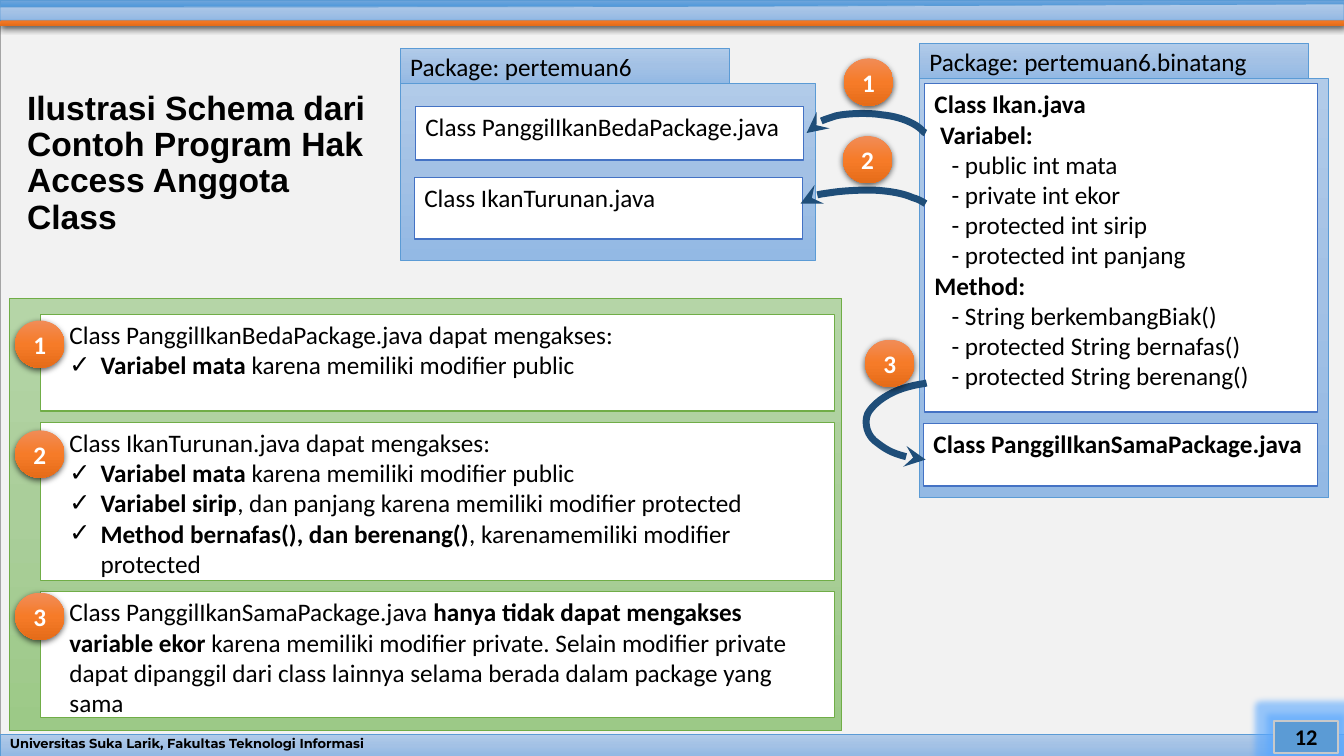
from lxml.etree import SubElement
from pptx import Presentation
from pptx.dml.color import RGBColor
from pptx.enum.shapes import MSO_SHAPE
from pptx.enum.text import MSO_ANCHOR, PP_ALIGN
from pptx.oxml.ns import qn
from pptx.util import Pt

PX = 9144  # 100 px to the inch
BLUE = ("B1CBE9", "A3C1E5", "93B9E4")
DEEP = ("71A6DB", "559BDB", "448ACA")
ORANGE = ("F18C57", "F67B28", "E56C19")
GREEN = ("B5D5A7", "AACE9A", "9CC987")
SKY, NAVY, LEAF, INK = "5B9BD5", "1F4E79", "70AD47", "000000"


def color(text):
    return RGBColor.from_string(text)


def node(parent, tag, **attrs):
    child = SubElement(parent, qn(tag))
    for name, value in attrs.items():
        child.set(name, str(value))
    return child


def tint(parent, hue, alpha):
    node(node(parent, "a:srgbClr", val=hue), "a:alpha", val=alpha * 1000)


def paint(shape, fill=None, line=None, width=0.5):
    """Fill with one colour, or with three as a gradient from top to bottom."""
    shape.shadow.inherit = False
    if fill is None:
        shape.fill.background()
    elif isinstance(fill, str):
        shape.fill.solid()
        shape.fill.fore_color.rgb = color(fill)
    else:
        shape.fill.gradient()
        shape.fill.gradient_angle = 270
        stops = shape._element.spPr.find(".//" + qn("a:gsLst"))
        stops.clear()
        for i, hue in enumerate(fill):
            node(node(stops, "a:gs", pos=i * 50000), "a:srgbClr", val=hue)
    if line:
        shape.line.color.rgb = color(line)
        shape.line.width = Pt(width)
    else:
        shape.line.fill.background()


def effects(shape):
    return shape._element.spPr.find(qn("a:effectLst"))


def shade(shape):
    drop = node(effects(shape), "a:outerShdw", blurRad=Pt(4.5), dist=Pt(1.5),
                dir=5400000, algn="ctr", rotWithShape=0)
    tint(drop, INK, 63)


def box(slide, at, fill, line=None, width=0.5, kind=MSO_SHAPE.RECTANGLE):
    shape = slide.shapes.add_shape(kind, *(v * PX for v in at))
    paint(shape, fill, line, width)
    return shape


def write(shape, paras, size=18, font="Calibri", hue=INK, mid=False,
          align=PP_ALIGN.LEFT, space=None):
    """Fill in (text, indent, bullet) paragraphs; stars enclose bold parts."""
    frame = shape.text_frame
    frame.word_wrap = True
    frame.vertical_anchor = MSO_ANCHOR.MIDDLE if mid else MSO_ANCHOR.TOP
    for i, (text, indent, bullet) in enumerate(paras):
        para = frame.add_paragraph() if i else frame.paragraphs[0]
        para.alignment = align
        para.line_spacing = space
        props = para._p.get_or_add_pPr()
        props.set("marL", str(indent * PX))
        props.set("indent", str(-31 * PX if bullet else 0))
        if bullet:
            node(props, "a:buFont", typeface="Arial")
            node(props, "a:buChar", char="✓")
        for j, part in enumerate(text.split("*")):
            if part:
                run = para.add_run()
                run.text = part
                run.font.size = Pt(size)
                run.font.name = font
                run.font.bold = j % 2 == 1
                run.font.color.rgb = color(hue)


def label(slide, at, text, **style):
    area = slide.shapes.add_textbox(*(v * PX for v in at))
    write(area, [(text, 0, False)], mid=True, **style)


def outline(slide, dots, close=False, sides=0):
    """Draw the first sides straight, and each further three points as a curve."""
    pen = slide.shapes.build_freeform(*dots[0], scale=PX)
    pen.add_line_segments(dots[1:], close=close)
    shape = pen.convert_to_shape()
    lines = list(shape._element.spPr.iter(qn("a:lnTo")))
    for i in range(sides, len(lines), 3):
        trio = lines[i:i + 3]
        parent = trio[0].getparent()
        bend = node(parent, "a:cubicBezTo")
        trio[0].addprevious(bend)
        for line in trio:
            bend.append(line[0])
            parent.remove(line)
    return shape


def arrow(slide, dots):
    shape = outline(slide, dots)
    paint(shape, None, NAVY, 5)
    node(shape.line._get_or_add_ln(), "a:headEnd", type="stealth")


def badge(slide, x, y, text):
    disc = box(slide, (x, y, 49, 47), ORANGE, kind=MSO_SHAPE.OVAL)
    shade(disc)
    write(disc, [(f"*{text}*", 0, False)], hue="FFFFFF", mid=True, align=PP_ALIGN.CENTER)


def package(slide, tab, body, name):
    write(box(slide, tab, BLUE, SKY), [(name, 0, False)], mid=True)
    box(slide, body, BLUE, SKY)


def card(slide, at, paras, line="4472C4"):
    write(box(slide, at, "FFFFFF", line, 1), paras)


def frame(slide):
    box(slide, (0, 4, 1333, 746), "F2F2F2", "A5A5A5")
    bar = outline(slide, [(1333, 26), (0, 26), (1, 21), (2, 17), (3, 13),
                          (507, 13), (906, 12), (1333, 13)], True, 1)
    paint(bar, ORANGE)
    shade(bar)
    box(slide, (0, 729, 1333, 21), BLUE, SKY)
    box(slide, (0, 0, 1333, 11), DEEP, SKY)
    band = outline(slide, [(1333, 20), (0, 20), (0, 7), (733, 7), (770, 6), (1333, 4)],
                   True, 2)
    paint(band, BLUE, SKY)
    label(slide, (0, 729, 1333, 21), "*Universitas Suka Larik, Fakultas Teknologi Informasi*",
          size=9.3, font="Montserrat", space=0.7)
    page = box(slide, (1264, 715, 63, 32), SKY, "C9C9C9", 1.5)
    tint(node(effects(page), "a:glow", rad=Pt(9)), "5AA8FF", 60)
    write(page, [("*12*", 0, False)], size=16, mid=True, align=PP_ALIGN.CENTER)


def schema(slide):
    package(slide, (397, 48, 326, 35), (397, 83, 412, 175), "Package: pertemuan6")
    package(slide, (912, 43, 386, 35), (912, 78, 406, 416), "Package: pertemuan6.binatang")
    card(slide, (412, 106, 385, 53), [("Class PanggilIkanBedaPackage.java", 0, False)])
    card(slide, (411, 176, 385, 61), [("Class IkanTurunan.java", 0, False)])
    fields = ["public int mata", "private int ekor", "protected int sirip",
              "protected int panjang"]
    calls = ["String berkembangBiak()", "protected String bernafas()",
             "protected String berenang()"]
    card(slide, (917, 83, 390, 326),
         [("*Class Ikan.java*", 0, False), (" *Variabel:*", 0, False)]
         + [("- " + text, 17, False) for text in fields]
         + [("*Method:*", 0, False)]
         + [("- " + text, 17, False) for text in calls])
    card(slide, (916, 420, 391, 62), [("*Class PanggilIkanSamaPackage.java*", 0, False)])
    arrow(slide, [(800, 132), (803, 123), (817, 119), (829, 115), (842, 112), (864, 112),
                  (875, 114), (886, 115), (897, 118), (906, 123), (915, 128), (916, 132),
                  (918, 132)])
    arrow(slide, [(918, 456), (890, 454), (877, 445), (867, 437), (858, 429), (857, 415),
                  (862, 408), (867, 401), (876, 393), (891, 387), (907, 381), (917, 381),
                  (919, 380)])
    arrow(slide, [(794, 202), (797, 195), (811, 193), (825, 191), (838, 189), (861, 188),
                  (872, 189), (884, 190), (896, 192), (905, 196), (915, 199), (915, 201),
                  (918, 202)])
    for num, (x, y) in enumerate([(837, 58), (836, 135), (858, 337)], 1):
        badge(slide, x, y, num)


def notes(slide):
    box(slide, (9, 296, 826, 429), GREEN, LEAF)
    mata = ("*Variabel mata *karena memiliki modifier public", 50, True)
    items = [
        (312, 96, 318, [("Class PanggilIkanBedaPackage.java dapat mengakses:", 19, False), mata]),
        (419, 157, 427, [
            ("Class IkanTurunan.java dapat mengakses:", 19, False), mata,
            ("*Variabel sirip*, dan panjang karena memiliki modifier protected", 50, True),
            ("*Method bernafas(), dan berenang()*, karenamemiliki modifier protected", 50, True)]),
        (587, 125, 588, [
            ("Class PanggilIkanSamaPackage.java *hanya tidak dapat mengakses variable ekor *"
             "karena memiliki modifier private. Selain modifier private dapat dipanggil dari "
             "class lainnya selama berada dalam package yang sama", 19, False)]),
    ]
    for num, (top, high, disc, paras) in enumerate(items, 1):
        card(slide, (40, top, 788, high), paras, LEAF)
        badge(slide, 15, disc, num)


def main():
    deck = Presentation()
    deck.slide_width, deck.slide_height = 1333 * PX, 750 * PX
    slide = deck.slides.add_slide(deck.slide_layouts[6])
    frame(slide)
    label(slide, (17, 41, 365, 243),
          "*Ilustrasi Schema dari Contoh Program Hak Access Anggota Class*",
          size=24, font="Arial", space=0.9)
    schema(slide)
    notes(slide)
    deck.save("out.pptx")


if __name__ == "__main__":
    main()
